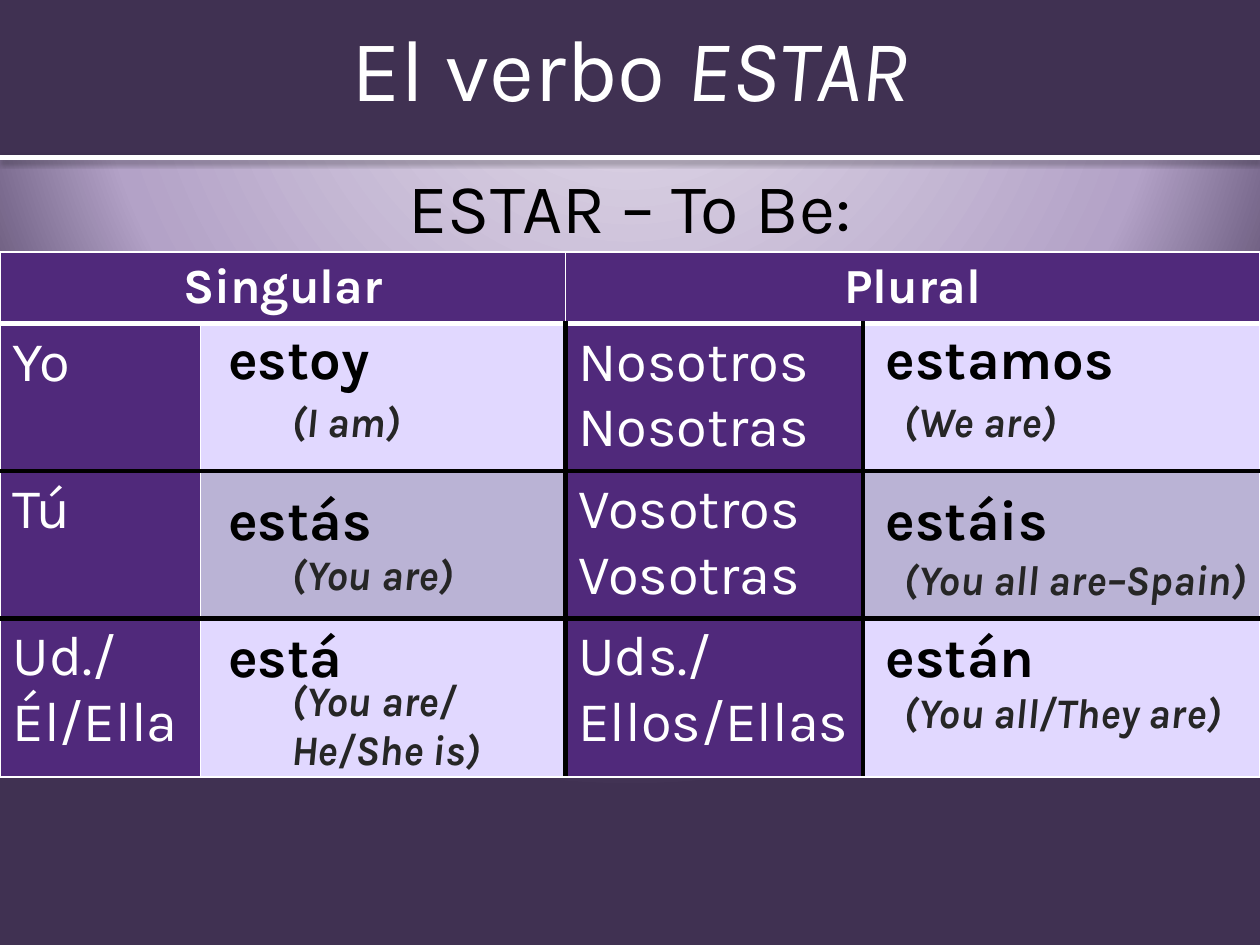
from lxml import etree
from pptx import Presentation
from pptx.dml.color import RGBColor
from pptx.enum.shapes import MSO_CONNECTOR as Connector, MSO_SHAPE as Shape
from pptx.enum.text import MSO_ANCHOR as Anchor, MSO_AUTO_SIZE as AutoSize, PP_ALIGN as Align
from pptx.oxml import parse_xml
from pptx.oxml.ns import nsdecls, qn
from pptx.util import Inches, Pt

WIDTH, HEIGHT = 10, 7.5
FONT = "Karla"
WHITE, BLACK, GREY = "FFFFFF", "000000", "262626"
DARK, PURPLE, PALE, MUTED = "403152", "50297B", "E1D8FF", "BAB3D5"
NO_STYLE = "{2D5ABB26-0587-4C30-8999-92F81FD0307C}"

BAND = 1.25
COLUMNS = [1.59, 2.9, 2.36, 3.15]
ROWS = [0.56, 1.17, 1.17, 1.26]
HEADINGS = ["Singular", "Plural"]
PRONOUNS = [
    (["Yo"], ["Nosotros", "Nosotras"]),
    (["Tú"], ["Vosotros", "Vosotras"]),
    (["Ud./Él/Ella"], ["Uds./Ellos/Ellas"]),
]

# Each side: left of verbs, left of meanings, width of both, then (text, top) pairs
VERB_TOPS = [2.55, 3.83, 4.92]
SIDES = [
    (1.71, 2.21, 2.46, 2.14, ["estoy", "estás", "está"],
     [("(I am)", 3.12), ("(You are)", 4.33), ("(You are/ He/She is)", 5.33)]),
    (6.93, 7.07, 2.82, 2.92, ["estamos", "estáis", "están"],
     [("(We are)", 3.12), ("(You all are–Spain)", 4.37), ("(You all/They are)", 5.43)]),
]


def color(value):
    return RGBColor.from_string(value)


def inches(*lengths):
    return [Inches(length) for length in lengths]


def add_span(para, text, size, shade, bold=False, italic=False):
    span = para.add_run()
    span.text = text
    font = span.font
    font.name, font.size, font.bold, font.italic = FONT, Pt(size), bold, italic
    font.color.rgb = color(shade)


def set_background(page):
    """Round gradient centred above the page."""
    stops = [(0, "E6E0EC"), (68, "B3A2C7"), (100, DARK)]
    stop_xml = "".join(
        f'<a:gs pos="{share * 1000}"><a:srgbClr val="{shade}"/></a:gs>' for share, shade in stops)
    page.background.fill.solid()
    properties = page.background._cSld.bg.bgPr
    properties.replace(properties[0], parse_xml(
        f'<a:gradFill {nsdecls("a")} rotWithShape="1"><a:gsLst>{stop_xml}</a:gsLst>'
        '<a:path path="circle"><a:fillToRect l="50000" t="-80000" r="50000" b="180000"/>'
        '</a:path></a:gradFill>'))


def add_header(page, left, top, width, height):
    """Dark band, white rule with a soft shadow, and the title."""
    band = page.shapes.add_shape(Shape.RECTANGLE, *inches(left, top, width, height))
    band.shadow.inherit = False
    band.fill.solid()
    band.fill.fore_color.rgb = color(DARK)
    band.line.fill.background()

    bottom = top + height
    rule = page.shapes.add_connector(
        Connector.STRAIGHT, *inches(left, bottom, left + width, bottom))
    rule.line.color.rgb = color(WHITE)
    rule.line.width = Pt(3)
    rule._element.spPr.append(parse_xml(
        f'<a:effectLst {nsdecls("a")}><a:outerShdw blurRad="{Pt(3.1)}" dist="{Pt(1.6)}" '
        'dir="5400000" rotWithShape="0"><a:srgbClr val="000000"><a:alpha val="38000"/>'
        '</a:srgbClr></a:outerShdw></a:effectLst>'))

    title = page.shapes.title
    title.left, title.top, title.width, title.height = inches(left, top, width, height * 0.85)
    frame = title.text_frame
    frame.auto_size, frame.vertical_anchor = AutoSize.NONE, Anchor.MIDDLE
    para = frame.paragraphs[0]
    para.alignment = Align.CENTER
    add_span(para, "El verbo ", 50, WHITE)
    add_span(para, "ESTAR", 50, WHITE, italic=True)
    page.shapes._spTree.append(title._element)  # in front of the band


def add_subtitle(page, left, top, width, height):
    frame = page.shapes.add_textbox(*inches(left, top, width, height)).text_frame
    frame.word_wrap = True
    para = frame.paragraphs[0]
    para.alignment = Align.CENTER
    add_span(para, "ESTAR – To Be:", 40, BLACK)


def add_plain_table(page, left, top, columns, rows):
    frame = page.shapes.add_table(
        len(rows), len(columns), *inches(left, top, sum(columns), sum(rows)))
    table = frame.table
    table.first_row = table.horz_banding = False
    table._tbl.tblPr.find(qn("a:tableStyleId")).text = NO_STYLE
    for column, width in zip(table.columns, columns):
        column.width = Inches(width)
    for row, height in zip(table.rows, rows):
        row.height = Inches(height)
    return table


def set_borders(cell, row, column):
    """White outside and in the header, heavy black between body parts."""
    def across(edge):
        return {1: (WHITE, 3), 2: (BLACK, 3), 3: (BLACK, 3)}.get(edge, (WHITE, 1))

    def down(edge):
        return (BLACK, 3) if row > 0 and edge in (2, 3) else (WHITE, 1)

    edges = {"lnL": down(column), "lnR": down(column + 1),
             "lnT": across(row), "lnB": across(row + 1)}
    properties = cell._tc.get_or_add_tcPr()
    for place, (tag, (shade, weight)) in enumerate(edges.items()):
        line = etree.Element(qn(f"a:{tag}"), w=str(Pt(weight)))
        fill = etree.SubElement(line, qn("a:solidFill"))
        etree.SubElement(fill, qn("a:srgbClr"), val=shade)
        properties.insert(place, line)


def add_pronoun_table(page, left, top):
    table = add_plain_table(page, left, top, COLUMNS, ROWS)
    for row in range(len(ROWS)):
        for column in range(len(COLUMNS)):
            cell = table.cell(row, column)
            cell.fill.solid()
            verb_fill = MUTED if row == 2 else PALE
            cell.fill.fore_color.rgb = color(
                PURPLE if row == 0 or column % 2 == 0 else verb_fill)
            set_borders(cell, row, column)

    for side, heading in enumerate(HEADINGS):
        cell = table.cell(0, 2 * side)
        cell.merge(table.cell(0, 2 * side + 1))
        para = cell.text_frame.paragraphs[0]
        para.alignment = Align.CENTER
        add_span(para, heading, 28, WHITE, bold=True)

    for row, pair in enumerate(PRONOUNS, start=1):
        for side, lines in enumerate(pair):
            frame = table.cell(row, 2 * side).text_frame
            for index, text in enumerate(lines):
                para = frame.add_paragraph() if index else frame.paragraphs[0]
                add_span(para, text, 32, WHITE)


def add_label(page, left, top, width, height, text, size, shade, italic=False):
    """One-cell table without fill or borders."""
    cell = add_plain_table(page, left, top, [width], [height]).cell(0, 0)
    cell.margin_right = Inches(0.04)  # keeps the longest meaning on one line
    add_span(cell.text_frame.paragraphs[0], text, size, shade, bold=True, italic=italic)


def add_verb_forms(page, verb_left, meaning_left, verb_width, meaning_width, verbs, meanings):
    for verb, top in zip(verbs, VERB_TOPS):
        add_label(page, verb_left, top, verb_width, 0.63, verb, 32, BLACK)
    for meaning, top in meanings:
        add_label(page, meaning_left, top, meaning_width, 0.5, meaning, 24, GREY, italic=True)


def main():
    deck = Presentation()
    deck.slide_width, deck.slide_height = inches(WIDTH, HEIGHT)
    page = deck.slides.add_slide(deck.slide_layouts[5])
    set_background(page)
    add_header(page, 0, 0, WIDTH, BAND)
    add_subtitle(page, 0, BAND, WIDTH, 5.2)
    add_pronoun_table(page, 0, 2)
    for side in SIDES:
        add_verb_forms(page, *side)
    deck.save("out.pptx")


if __name__ == "__main__":
    main()
